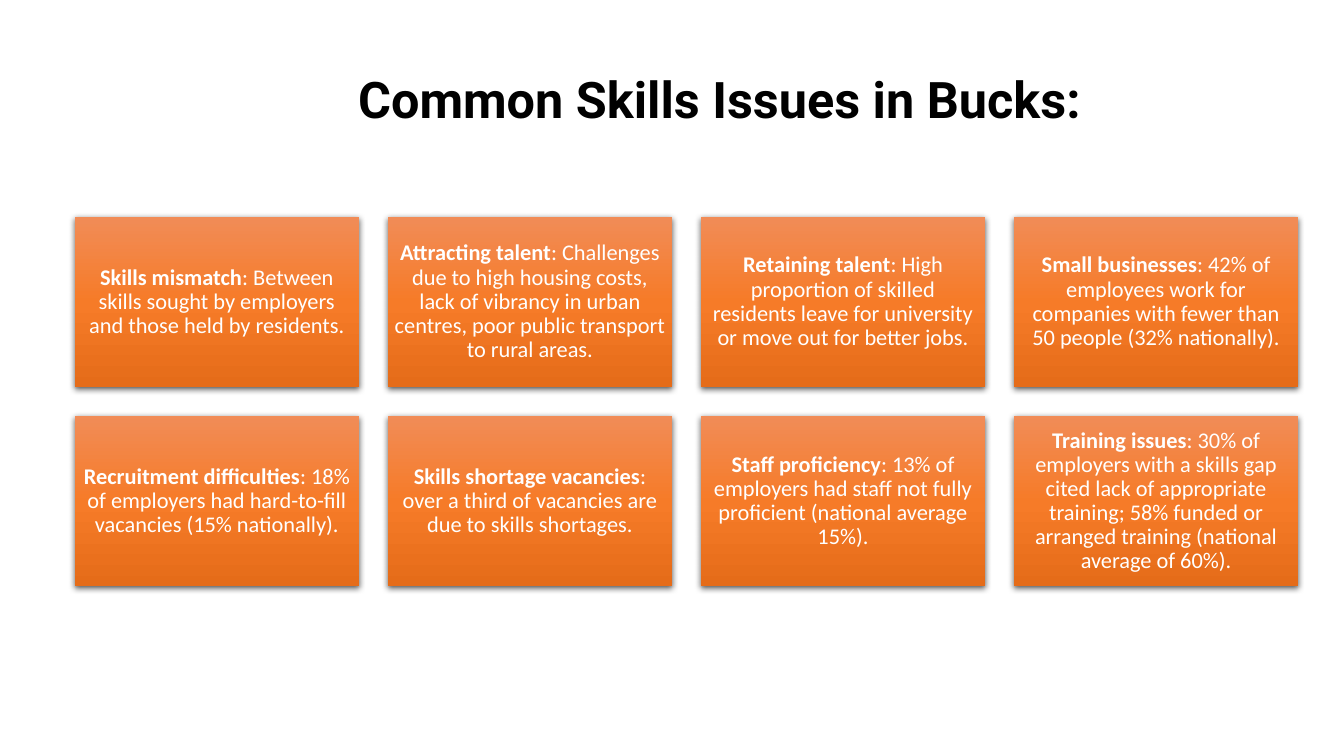
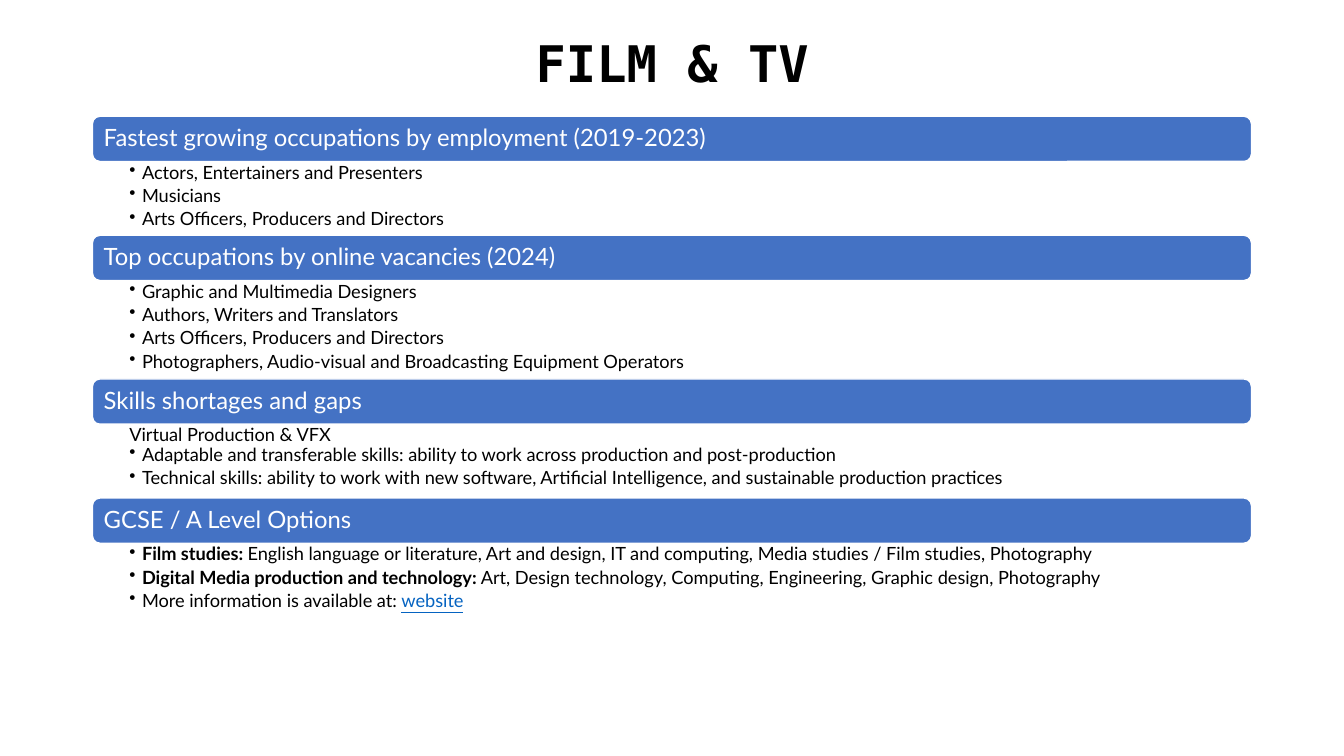
from lxml.etree import SubElement
from pptx import Presentation
from pptx.dml.color import RGBColor
from pptx.enum.shapes import MSO_SHAPE
from pptx.enum.text import MSO_ANCHOR, PP_ALIGN
from pptx.oxml.ns import qn
from pptx.util import Cm, Pt

BLACK, WHITE, BLUE, LINK = "000000", "FFFFFF", "4472C4", "0563C1"
ORANGES = [(0, "F18C57"), (50, "F67B28"), (100, "E56C19")]
BOLD = {"bold": True}

ISSUES = [
    ("Skills mismatch", ": Between skills sought by employers and those held by residents."),
    ("Attracting talent", ": Challenges due to high housing costs, lack of vibrancy in urban centres, "
                          "poor public transport to rural areas."),
    ("Retaining talent", ": High proportion of skilled residents leave for university or move out "
                         "for better jobs."),
    ("Small businesses", ": 42% of employees work for companies with fewer than 50 people "
                         "(32% nationally)."),
    ("Recruitment difficulties", ": 18% of employers had hard-to-fill vacancies (15% nationally)."),
    ("Skills shortage vacancies", ": over a third of vacancies are due to skills shortages."),
    ("Staff proficiency", ": 13% of employers had staff not fully proficient (national average 15%)."),
    ("Training issues", ": 30% of employers with a skills gap cited lack of appropriate training; "
                        "58% funded or arranged training (national average of 60%)."),
]

SECTIONS = [
    ("Fastest growing occupations by employment (2019-2023)", None, [
        [("Actors, Entertainers and Presenters", {})],
        [("Musicians", {})],
        [("Arts Officers, Producers and Directors", {})],
    ]),
    ("Top occupations by online vacancies (2024)", None, [
        [("Graphic and Multimedia Designers", {})],
        [("Authors, Writers and Translators", {})],
        [("Arts Officers, Producers and Directors", {})],
        [("Photographers, Audio-visual and Broadcasting Equipment Operators", {})],
    ]),
    ("Skills shortages and gaps", "Virtual Production & VFX", [
        [("Adaptable and transferable skills: ability to work across production and "
          "post-production", {})],
        [("Technical skills: ability to work with new software, Artificial Intelligence, and "
          "sustainable production practices", {})],
    ]),
    ("GCSE / A Level Options", None, [
        [("Film studies: ", BOLD),
         ("English language or literature, Art and design, IT and computing, Media studies / "
          "Film studies, Photography", {})],
        [("Digital Media production and technology: ", BOLD),
         ("Art, Design technology, Computing, Engineering, Graphic design, Photography", {})],
        [("More information is available at: ", {}),
         ("website", {"color": LINK, "underline": True})],
    ]),
]


def rgb(value):
    return RGBColor.from_string(value)


def set_frame(holder, margins, anchor):
    frame = holder.text_frame
    frame.word_wrap = True
    frame.vertical_anchor = anchor
    (frame.margin_left, frame.margin_top,
     frame.margin_right, frame.margin_bottom) = (Cm(margin) for margin in margins)
    return frame


def write(paragraph, runs, *, font, size, color, align=PP_ALIGN.LEFT, after=0, bullet=False):
    if bullet:
        properties = paragraph._p.get_or_add_pPr()
        properties.set("marL", str(Cm(0.32)))
        properties.set("indent", str(-Cm(0.32)))
        SubElement(properties, qn("a:buChar"), char="•")
    paragraph.alignment = align
    paragraph.line_spacing = 0.9
    paragraph.space_after = Pt(after)
    for words, style in runs:
        run = paragraph.add_run()
        run.text = words
        run.font.name = font
        run.font.size = Pt(size)
        run.font.bold = style.get("bold", False)
        run.font.underline = style.get("underline", False)
        run.font.color.rgb = rgb(style.get("color", color))


def add_title(slide, words, font, left, top, width):
    title = slide.shapes.add_textbox(Cm(left), Cm(top), Cm(width), Cm(2.03))
    frame = set_frame(title, (0.25, 0.13, 0.25, 0.13), MSO_ANCHOR.MIDDLE)
    write(frame.paragraphs[0], [(words, BOLD)], font=font, size=36, color=BLACK,
          align=PP_ALIGN.CENTER)


def add_color(parent, value):
    return SubElement(parent, qn("a:srgbClr"), val=value)


def shade_card(card):
    properties = card._element.spPr
    gradient = SubElement(properties, qn("a:gradFill"), rotWithShape="1")
    stops = SubElement(gradient, qn("a:gsLst"))
    for percent, value in ORANGES:
        add_color(SubElement(stops, qn("a:gs"), pos=str(percent * 1000)), value)
    SubElement(gradient, qn("a:lin"), ang="5400000", scaled="0")
    card.line.fill.background()
    effects = SubElement(properties, qn("a:effectLst"))
    shadow = SubElement(effects, qn("a:outerShdw"), blurRad=str(Pt(4.5)), dist=str(Pt(1.5)),
                        dir="5400000", algn="ctr", rotWithShape="0")
    SubElement(add_color(shadow, BLACK), qn("a:alpha"), val="63000")


def build_issues(slide):
    add_title(slide, "Common Skills Issues in Bucks:", "Roboto", 3.53, 1.55, 29.21)
    columns, left, top, width, height, gap = 4, 1.88, 5.46, 7.17, 4.3, 0.72
    for index, (heading, detail) in enumerate(ISSUES):
        row, column = divmod(index, columns)
        card = slide.shapes.add_shape(
            MSO_SHAPE.RECTANGLE, Cm(left + column * (width + gap)),
            Cm(top + row * (height + gap)), Cm(width), Cm(height))
        shade_card(card)
        frame = set_frame(card, (0.17,) * 4, MSO_ANCHOR.MIDDLE)
        write(frame.paragraphs[0], [(heading, BOLD), (detail, {})], font="Calibri", size=16,
              color=WHITE, align=PP_ALIGN.CENTER)


def build_film(slide):
    left, top, width, band_height, line_height = 2.33, 2.93, 29.21, 1.14, 0.62
    for heading, lead, items in SECTIONS:
        band = slide.shapes.add_shape(MSO_SHAPE.ROUNDED_RECTANGLE, Cm(left), Cm(top),
                                      Cm(width), Cm(band_height))
        band.shadow.inherit = False
        band.fill.solid()
        band.fill.fore_color.rgb = rgb(BLUE)
        band.line.color.rgb = rgb(WHITE)
        band.line.width = Pt(1)
        frame = set_frame(band, (0.23, 0.17, 0.23, 0.17), MSO_ANCHOR.MIDDLE)
        write(frame.paragraphs[0], [(heading, {})], font="Lato", size=17, color=WHITE)
        top += band_height

        lines = [([(lead, {})], False)] if lead else []
        lines += [(runs, True) for runs in items]
        height = line_height * len(lines)
        details = slide.shapes.add_textbox(Cm(left), Cm(top), Cm(width), Cm(height))
        frame = set_frame(details, (0.93, 0.05, 0.33, 0.05), MSO_ANCHOR.TOP)
        for index, (runs, bullet) in enumerate(lines):
            paragraph = frame.add_paragraph() if index else frame.paragraphs[0]
            write(paragraph, runs, font="Lato", size=13, color=BLACK, bullet=bullet,
                  after=2.6 if bullet else 0)
        top += height
    add_title(slide, "FILM & TV", "DejaVu Sans Mono", 9.7, 0.66, 14.48)


def main():
    deck = Presentation()
    deck.slide_width, deck.slide_height = Cm(33.87), Cm(19.05)
    for build in (build_issues, build_film):
        build(deck.slides.add_slide(deck.slide_layouts[6]))
    deck.save("out.pptx")


if __name__ == "__main__":
    main()
